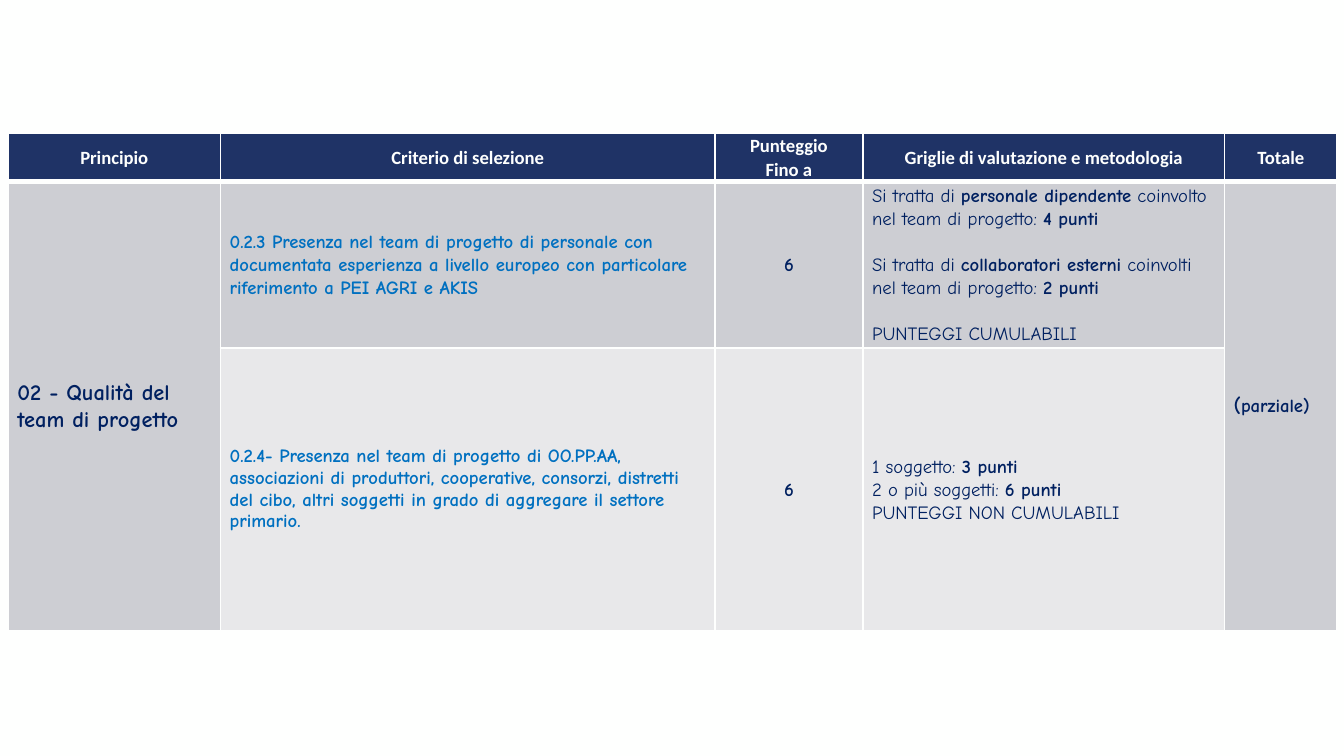
from dataclasses import dataclass

from lxml.etree import SubElement
from pptx import Presentation
from pptx.dml.color import RGBColor
from pptx.enum.text import MSO_ANCHOR, PP_ALIGN
from pptx.oxml.ns import qn
from pptx.util import Inches, Pt


@dataclass(frozen=True)
class Theme:
    white: str = "FEFFFE"
    header_fill: str = "1F3366"
    dark_fill: str = "CDCED3"
    light_fill: str = "E8E8EA"
    navy: str = "002060"
    blue: str = "0070C0"
    header_font: str = "Calibri"
    body_font: str = "Comic Neue"
    text_size: float = 10
    bracket_size: float = 11
    principle_size: float = 12
    line_spacing: float = 1.07
    blank_line: float = 12.3
    principle_space_after: float = 14.7


THEME = Theme()
COLUMN_WIDTHS = (1.58, 3.68, 1.1, 2.69, 0.84)
ROW_HEIGHTS = (0.35, 1.24, 2.1)
HEADERS = (
    "Principio",
    "Criterio di selezione",
    "Punteggio\nFino a",
    "Griglie di valutazione e metodologia",
    "Totale",
)
PRINCIPLE = "02 - Qualità del team di progetto"
CRITERIA = (
    (
        "0.2.3 Presenza nel team di progetto di personale con documentata esperienza "
        "a livello europeo con particolare riferimento a PEI AGRI e AKIS",
        "6",
        "Si tratta di **personale dipendente** coinvolto nel team di progetto: **4 punti**\n"
        "Si tratta di **collaboratori esterni** coinvolti nel team di progetto: **2 punti**\n"
        "PUNTEGGI CUMULABILI",
    ),
    (
        "0.2.4- Presenza nel team di progetto di OO.PP.AA, associazioni di produttori, "
        "cooperative, consorzi, distretti del cibo, altri soggetti in grado di aggregare "
        "il settore primario.",
        "6",
        "1 soggetto: **3 punti**\n2 o più soggetti: **6 punti**\nPUNTEGGI NON CUMULABILI",
    ),
)


def set_borders(cell, bottom_width=1):
    properties = cell._tc.get_or_add_tcPr()
    widths = {"a:lnL": 1, "a:lnR": 1, "a:lnT": 1, "a:lnB": bottom_width}
    for position, (tag, width) in enumerate(widths.items()):
        line = SubElement(properties, qn(tag), w=str(Pt(width)))
        fill = SubElement(line, qn("a:solidFill"))
        SubElement(fill, qn("a:srgbClr"), val=THEME.white)
        properties.insert(position, line)


def format_cell(cell, fill, bottom_width=1):
    cell.fill.solid()
    cell.fill.fore_color.rgb = RGBColor.from_string(fill)
    cell.vertical_anchor = MSO_ANCHOR.MIDDLE
    cell.margin_left = cell.margin_right = Inches(0.07)
    cell.margin_top = cell.margin_bottom = 0
    set_borders(cell, bottom_width)


def write_cell(cell, text, color=THEME.navy, size=THEME.text_size, font=THEME.body_font,
               bold=True, align=PP_ALIGN.LEFT, spacing=THEME.line_spacing, gap=0):
    """Write one paragraph a line; text between ** marks is bold when bold is None."""
    frame = cell.text_frame
    for index, line in enumerate(text.split("\n")):
        paragraph = frame.add_paragraph() if index else frame.paragraphs[0]
        paragraph.alignment = align
        paragraph.line_spacing = spacing
        if index and gap:
            paragraph.space_before = Pt(gap)
        paragraph.font.name = font
        paragraph.font.size = Pt(size)
        paragraph.font.color.rgb = RGBColor.from_string(color)
        if bold is not None:
            paragraph.font.bold = bold
        for part_index, part in enumerate(line.split("**")):
            if part:
                run = paragraph.add_run()
                run.text = part
                if bold is None:
                    run.font.bold = part_index % 2 == 1


def write_header(table):
    for column, text in enumerate(HEADERS):
        cell = table.cell(0, column)
        format_cell(cell, THEME.header_fill, bottom_width=3)
        write_cell(cell, text, THEME.white, font=THEME.header_font, align=PP_ALIGN.CENTER)


def write_criterion(table, row, criterion, fill, spacing, gap):
    description, score, grid = criterion
    for column in range(len(COLUMN_WIDTHS)):
        outer = column in (0, len(COLUMN_WIDTHS) - 1)
        format_cell(table.cell(row, column), THEME.dark_fill if outer else fill)
    write_cell(table.cell(row, 1), description, THEME.blue, spacing=spacing)
    write_cell(table.cell(row, 2), score, align=PP_ALIGN.CENTER)
    write_cell(table.cell(row, 3), grid, bold=None, gap=gap)


def write_merged_cells(table):
    last = len(COLUMN_WIDTHS) - 1
    for column in (0, last):
        table.cell(1, column).merge(table.cell(2, column))
    principle = table.cell(1, 0)
    write_cell(principle, PRINCIPLE, size=THEME.principle_size)
    principle.text_frame.paragraphs[0].space_after = Pt(THEME.principle_space_after)
    total = table.cell(1, last)
    write_cell(total, "(", spacing=1)
    paragraph = total.text_frame.paragraphs[0]
    paragraph.runs[0].font.size = Pt(THEME.bracket_size)
    paragraph.add_run().text = "parziale)"


def add_score_table(slide):
    frame = slide.shapes.add_table(
        len(ROW_HEIGHTS), len(COLUMN_WIDTHS), Inches(0.06), Inches(0.99),
        Inches(sum(COLUMN_WIDTHS)), Inches(sum(ROW_HEIGHTS)))
    table = frame.table
    table.horz_banding = False
    for column, width in zip(table.columns, COLUMN_WIDTHS):
        column.width = Inches(width)
    for row, height in zip(table.rows, ROW_HEIGHTS):
        row.height = Inches(height)
    write_header(table)
    write_criterion(table, 1, CRITERIA[0], THEME.dark_fill, THEME.line_spacing, THEME.blank_line)
    write_criterion(table, 2, CRITERIA[1], THEME.light_fill, 1, 0)
    write_merged_cells(table)


def main():
    presentation = Presentation()
    presentation.slide_width = Inches(10)
    presentation.slide_height = presentation.slide_width * 9 // 16
    slide = presentation.slides.add_slide(presentation.slide_layouts[6])
    slide.background.fill.solid()
    slide.background.fill.fore_color.rgb = RGBColor.from_string(THEME.white)
    add_score_table(slide)
    presentation.save("out.pptx")


if __name__ == "__main__":
    main()
